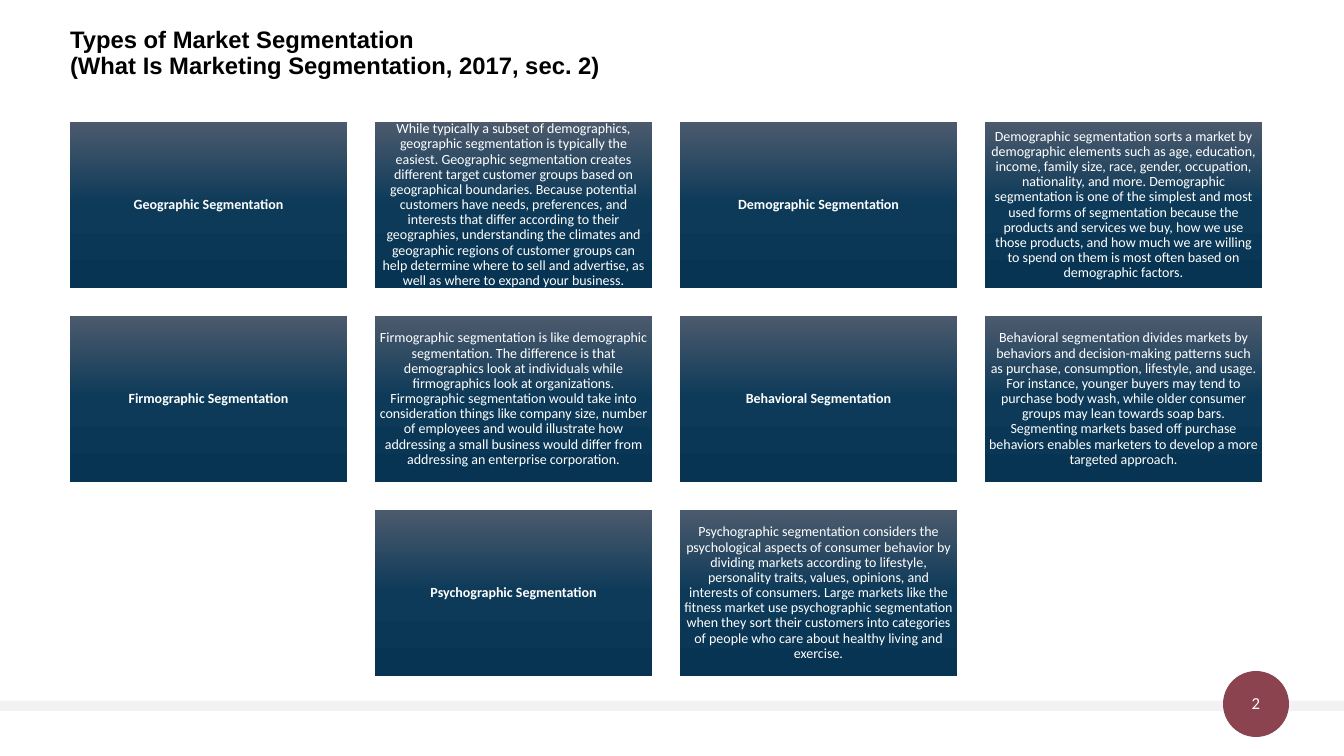
from copy import deepcopy

from pptx import Presentation
from pptx.dml.color import RGBColor
from pptx.enum.shapes import MSO_SHAPE
from pptx.enum.text import MSO_ANCHOR, MSO_AUTO_SIZE, PP_ALIGN
from pptx.util import Pt

# Content
TITLE = ["Types of Market Segmentation", "(What Is Marketing Segmentation, 2017, sec. 2)"]
PAGE_NUMBER = "2"
SEGMENTS = [
    ("Geographic Segmentation",
     "While typically a subset of demographics, geographic segmentation is typically the easiest. "
     "Geographic segmentation creates different target customer groups based on geographical "
     "boundaries. Because potential customers have needs, preferences, and interests that differ "
     "according to their geographies, understanding the climates and geographic regions of customer "
     "groups can help determine where to sell and advertise, as well as where to expand your business."),
    ("Demographic Segmentation",
     "Demographic segmentation sorts a market by demographic elements such as age, education, income, "
     "family size, race, gender, occupation, nationality, and more. Demographic segmentation is one of "
     "the simplest and most used forms of segmentation because the products and services we buy, how we "
     "use those products, and how much we are willing to spend on them is most often based on "
     "demographic factors."),
    ("Firmographic Segmentation",
     "Firmographic segmentation is like demographic segmentation. The difference is that demographics "
     "look at individuals while firmographics look at organizations. Firmographic segmentation would "
     "take into consideration things like company size, number of employees and would illustrate how "
     "addressing a small business would differ from addressing an enterprise corporation."),
    ("Behavioral Segmentation",
     "Behavioral segmentation divides markets by behaviors and decision-making patterns such as "
     "purchase, consumption, lifestyle, and usage. For instance, younger buyers may tend to purchase "
     "body wash, while older consumer groups may lean towards soap bars. Segmenting markets based off "
     "purchase behaviors enables marketers to develop a more targeted approach."),
    ("Psychographic Segmentation",
     "Psychographic segmentation considers the psychological aspects of consumer behavior by dividing "
     "markets according to lifestyle, personality traits, values, opinions, and interests of consumers. "
     "Large markets like the fitness market use psychographic segmentation when they sort their "
     "customers into categories of people who care about healthy living and exercise."),
]

# Format
COLORS = {"band": "F2F2F2", "badge": "8A434F", "title": "000000", "light": "FFFFFF",
          "top": "4C5A6D", "middle": "0C3A58", "bottom": "073452"}
GRADIENT = [(0, "top"), (0.5, "middle"), (1, "bottom")]
TITLE_FONT = {"name": "Arial", "size": Pt(17), "bold": True}
HEAD_FONT = {"name": "Calibri", "size": Pt(10), "bold": True}
BODY_FONT = {"name": "Calibri", "size": Pt(10), "bold": False}
BADGE_FONT = {"name": "Calibri", "size": Pt(12), "bold": False}

# Layout in px
EMU_PER_PX = 914400 / 100.8
COLUMNS = 4
LEFT, TOP, WIDTH, HEIGHT, GAP = 70, 122, 277, 166, 28


def px(length):
    return round(length * EMU_PER_PX)


def set_values(target, values):
    for name, value in values.items():
        setattr(target, name, value)


def rgb(name):
    return RGBColor.from_string(COLORS[name])


def write(shape, text, font, color, align, anchor, margins):
    frame = shape.text_frame
    sides = ("margin_left", "margin_top", "margin_right", "margin_bottom")
    set_values(frame, dict(zip(sides, map(px, margins))))
    set_values(frame, {"word_wrap": True, "auto_size": MSO_AUTO_SIZE.NONE,
                       "vertical_anchor": anchor, "text": text})
    para = frame.paragraphs[0]
    set_values(para, {"alignment": align, "line_spacing": 0.9})
    for span in para.runs:
        set_values(span.font, font)
        span.font.color.rgb = rgb(color)


def add_plain(page, kind, x, y, width, height, color=None):
    shape = page.shapes.add_shape(kind, px(x), px(y), px(width), px(height))
    shape.shadow.inherit = False
    shape.line.fill.background()
    if color:
        shape.fill.solid()
        shape.fill.fore_color.rgb = rgb(color)
    return shape


def add_box(page, x, y, text, font):
    box = add_plain(page, MSO_SHAPE.RECTANGLE, x, y, WIDTH, HEIGHT)
    box.fill.gradient()
    box.fill.gradient_angle = 270
    # A new gradient has two stops: add the third
    stops = box.element.spPr.find(".//{*}gsLst")
    stops.append(deepcopy(stops[0]))
    for stop, (position, color) in zip(box.fill.gradient_stops, GRADIENT):
        stop.position = position
        stop.color.rgb = rgb(color)
    write(box, text, font, "light", PP_ALIGN.CENTER, MSO_ANCHOR.MIDDLE, (4, 4, 4, 4))


def main():
    deck = Presentation()
    set_values(deck, {"slide_width": px(1344), "slide_height": px(756)})
    page = deck.slides.add_slide(deck.slide_layouts[5])

    # Title
    title = page.shapes.title
    set_values(title, {"left": px(70), "top": px(23), "width": px(1192), "height": px(130)})
    write(title, "\v".join(TITLE), TITLE_FONT, "title", PP_ALIGN.LEFT, MSO_ANCHOR.TOP, (0, 5, 10, 5))

    # Footer band and page number
    add_plain(page, MSO_SHAPE.RECTANGLE, 0, 701, 1344, 10, "band")
    badge = add_plain(page, MSO_SHAPE.OVAL, 1223, 671, 66, 66, "badge")
    write(badge, PAGE_NUMBER, BADGE_FONT, "light", PP_ALIGN.CENTER, MSO_ANCHOR.MIDDLE, (0, 0, 0, 0))

    # Boxes: name and description in turn, a short last row is centred
    cells = [cell for name, description in SEGMENTS
             for cell in ((name, HEAD_FONT), (description, BODY_FONT))]
    for start in range(0, len(cells), COLUMNS):
        row = cells[start:start + COLUMNS]
        indent = (COLUMNS - len(row)) / 2
        y = TOP + start // COLUMNS * (HEIGHT + GAP)
        for column, (text, font) in enumerate(row):
            add_box(page, LEFT + (column + indent) * (WIDTH + GAP), y, text, font)

    deck.save("out.pptx")


if __name__ == "__main__":
    main()
